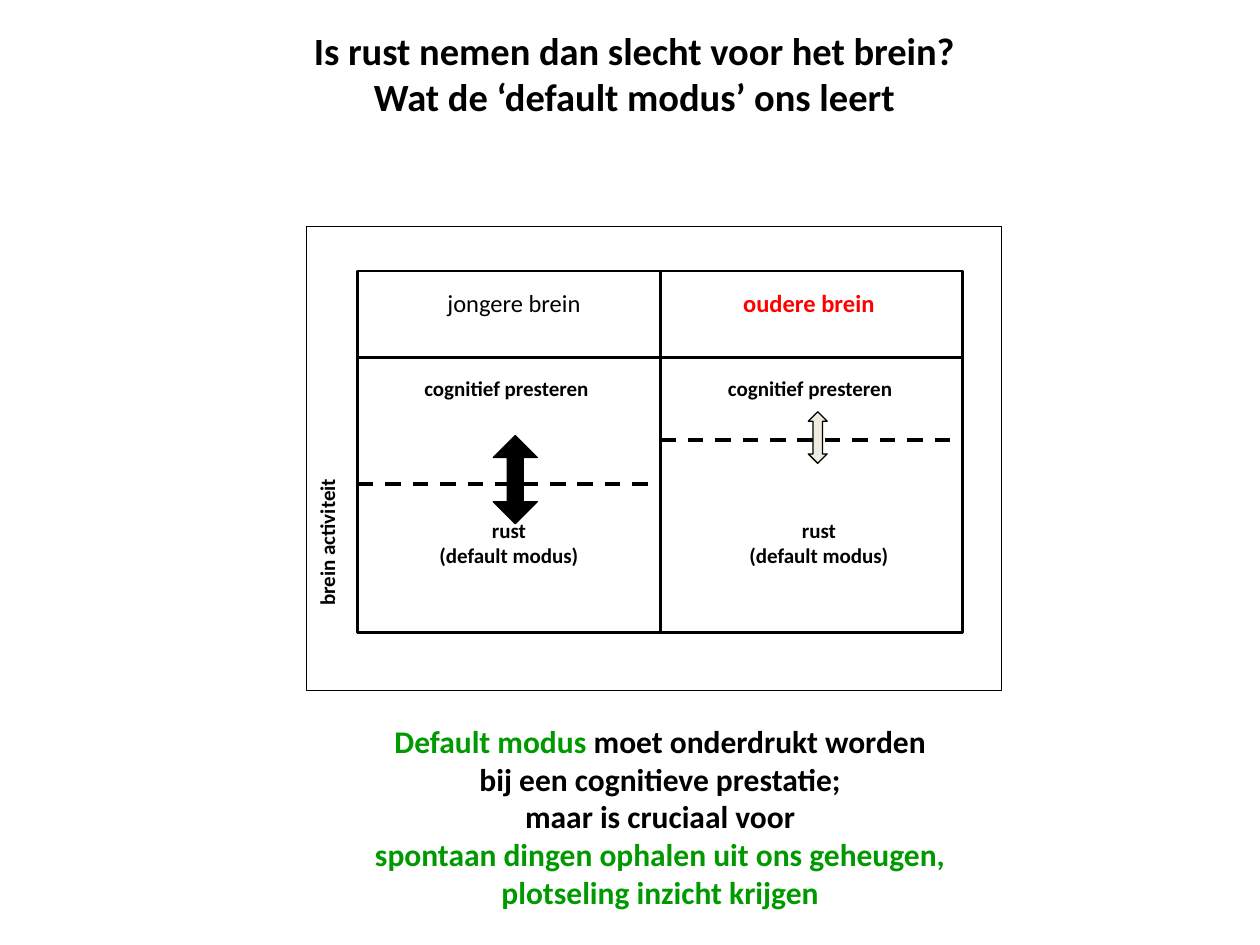
from collections import namedtuple

from lxml.etree import SubElement
from pptx import Presentation
from pptx.dml.color import RGBColor
from pptx.enum.dml import MSO_LINE as Dash
from pptx.enum.shapes import MSO_CONNECTOR as Connector, MSO_SHAPE as Shape
from pptx.enum.text import MSO_ANCHOR as Anchor, MSO_AUTO_SIZE as AutoSize, PP_ALIGN as Align
from pptx.oxml.ns import qn
from pptx.util import Inches, Pt

BLACK, RED, GREEN, CREAM = "000000", "FF0000", "009900", "EEECE1"
Box = namedtuple("Box", "left top width height")
Column = namedtuple("Column", "name color bold level arrow arrow_fill head shifts")

HEADER_SHARE = 0.24
COLUMNS = [
    Column("jongere brein", BLACK, False, 0.46, (0.35, 0.70), BLACK, 0.363,
           (0.04, -0.02, 0, 0.05)),
    Column("oudere brein", RED, True, 0.30, (0.15, 0.41), CREAM, 0.5,
           (-0.02, -0.01, 0.06, 0.05)),
]
TITLE = [
    [("Is rust nemen dan slecht voor het brein?", BLACK)],
    [("Wat de ‘default modus’ ons leert", BLACK)],
]
CONCLUSION = [
    [("Default modus ", GREEN), ("moet onderdrukt worden", BLACK)],
    [("bij een cognitieve prestatie;", BLACK)],
    [("maar is cruciaal voor", BLACK)],
    [("spontaan dingen ophalen uit ons geheugen,", GREEN)],
    [("plotseling inzicht krijgen", GREEN)],
]


def rgb(value):
    """Turn a hex string into a colour."""
    return RGBColor.from_string(value)


def inches(box):
    """Convert a box to lengths."""
    return [Inches(length) for length in box]


def write(shape, lines, size, bold=True, align=Align.CENTER):
    """Fill a shape with lines of coloured spans."""
    frame = shape.text_frame
    frame.auto_size = AutoSize.NONE
    frame.word_wrap = False
    for index, line in enumerate(lines):
        para = frame.add_paragraph() if index else frame.paragraphs[0]
        para.alignment = align
        para.font.name, para.font.size, para.font.bold = "Calibri", Pt(size), bold
        for text, color in line:
            span = para.add_run()
            span.text = text
            span.font.color.rgb = rgb(color)


def add_label(parent, box, lines, size=12, color=BLACK, bold=True, align=Align.CENTER):
    """Add a text box whose lines share one colour."""
    label = parent.shapes.add_textbox(*inches(box))
    write(label, [[(line, color)] for line in lines], size, bold, align)
    return label


def add_outline(parent, kind, box, width, fill=None):
    """Add a black-edged shape, filled or hollow."""
    shape = parent.shapes.add_shape(kind, *inches(box))
    shape.shadow.inherit = False
    shape.line.color.rgb = rgb(BLACK)
    shape.line.width = Pt(width)
    if fill:
        shape.fill.solid()
        shape.fill.fore_color.rgb = rgb(fill)
    else:
        shape.fill.background()
    return shape


def add_dashes(parent, left, right, y):
    """Add a dashed horizontal line."""
    line = parent.shapes.add_connector(
        Connector.STRAIGHT, Inches(left), Inches(y), Inches(right), Inches(y))
    line.line.color.rgb = rgb(BLACK)
    line.line.width = Pt(2.25)
    line.line.dash_style = Dash.DASH
    SubElement(line._element.spPr, qn("a:effectLst"))


def add_column(parent, box, column):
    """Draw one brain's header, activity level and arrow."""
    header = box.height * HEADER_SHARE
    body_top, body = box.top + header, box.height - header
    level = body_top + body * column.level
    center = box.left + box.width / 2
    name_x, task_x, rest_x, arrow_x = [center + shift for shift in column.shifts]
    wide, tall = column.arrow

    add_outline(parent, Shape.RECTANGLE, Box(box.left, body_top, box.width, body), 1.5)
    add_outline(parent, Shape.RECTANGLE, Box(box.left, box.top, box.width, header), 1.5)
    add_label(parent, Box(name_x - 0.78, box.top + 0.09, 1.56, 0.33), [column.name],
              14, column.color, column.bold)
    add_dashes(parent, box.left, box.left + box.width, level)
    add_label(parent, Box(task_x - 0.85, body_top + 0.09, 1.7, 0.3),
              ["cognitief presteren"])
    add_label(parent, Box(rest_x - 0.73, body_top + 1.22, 1.46, 0.5),
              ["rust", "(default modus)"])
    arrow = add_outline(parent, Shape.UP_DOWN_ARROW,
                        Box(arrow_x - wide / 2, level - tall * 0.55, wide, tall),
                        0.75, column.arrow_fill)
    arrow.adjustments[0], arrow.adjustments[1] = 0.5, column.head


def add_diagram(page, box):
    """Draw the framed comparison of both brains."""
    group = page.shapes.add_group_shape()
    width = 2.4
    for index, column in enumerate(COLUMNS):
        left = box.left + 0.41 + index * width
        add_column(group, Box(left, box.top + 0.35, width, 2.87), column)
    axis = add_label(group, Box(box.left - 0.5, box.top + 2.29, 1.33, 0.3),
                     ["brein activiteit"], align=Align.LEFT)
    axis.rotation = 270
    add_outline(group, Shape.RECTANGLE, box, 0.75)


def add_title(page, box):
    """Place the title placeholder."""
    title = page.shapes.title
    title.left, title.top, title.width, title.height = inches(box)
    title.text_frame.vertical_anchor = Anchor.MIDDLE
    write(title, TITLE, 22)


def add_conclusion(page, box):
    """Write the closing statement."""
    write(page.shapes.add_textbox(*inches(box)), CONCLUSION, 18)


def main():
    """Build and save the deck."""
    deck = Presentation()
    deck.slide_width, deck.slide_height = Inches(10), Inches(7.5)
    page = deck.slides.add_slide(deck.slide_layouts[5])
    add_title(page, Box(2.36, 0.16, 5.35, 0.84))
    add_diagram(page, Box(2.43, 1.8, 5.52, 3.68))
    add_conclusion(page, Box(2.52, 5.68, 5.44, 1.6))
    deck.save("out.pptx")


if __name__ == "__main__":
    main()
